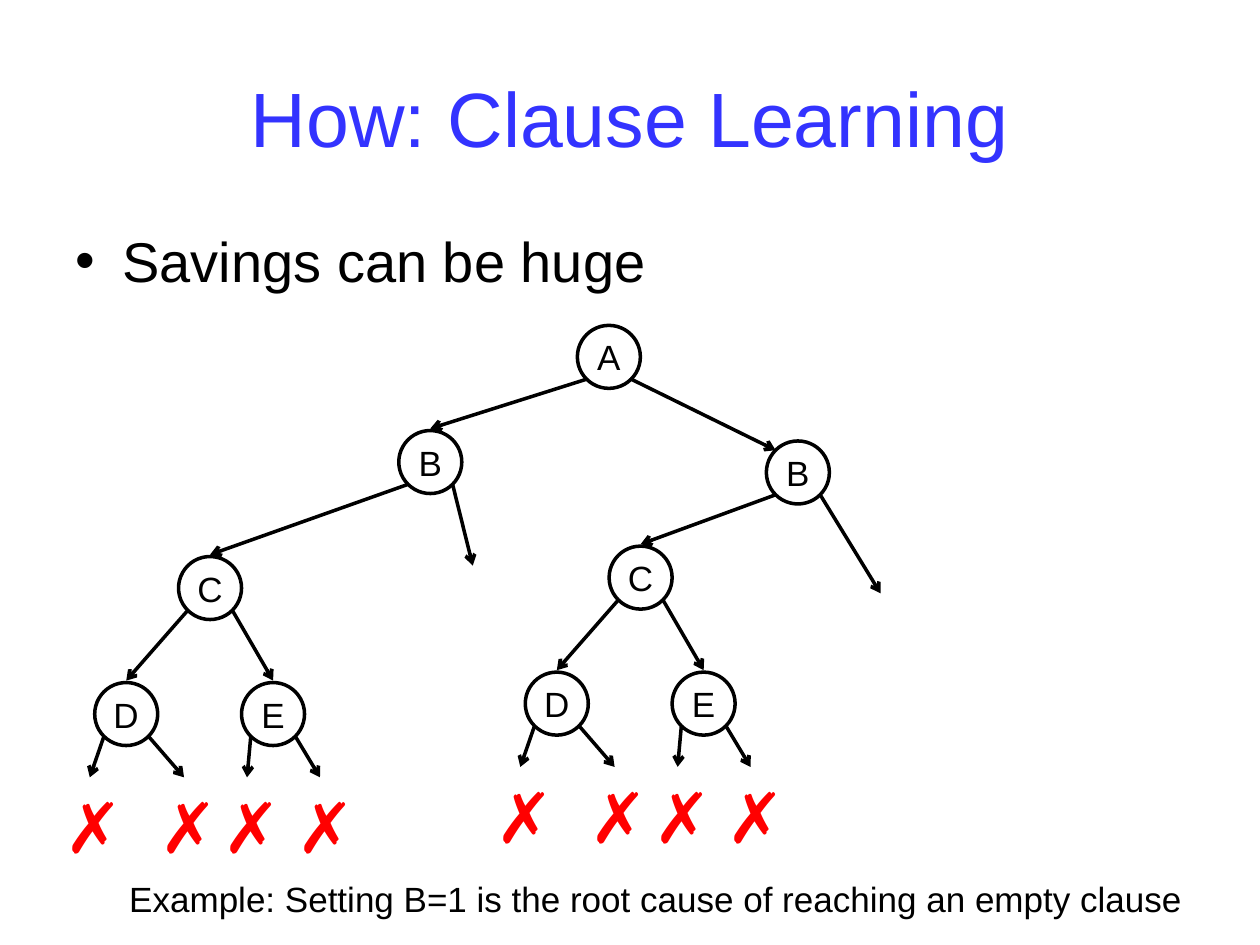
from dataclasses import dataclass

from lxml.etree import SubElement
from pptx import Presentation
from pptx.dml.color import RGBColor
from pptx.enum.shapes import MSO_CONNECTOR as Connector, MSO_SHAPE as Shape
from pptx.enum.text import MSO_ANCHOR as Anchor, PP_ALIGN as Align
from pptx.oxml.ns import qn
from pptx.util import Cm, Pt


@dataclass(frozen=True)
class Theme:
    font: str = "Arial"
    heading: RGBColor = RGBColor(0x33, 0x33, 0xFF)
    ink: RGBColor = RGBColor(0, 0, 0)
    conflict: RGBColor = RGBColor(0xFF, 0, 0)
    title_size: int = 44
    bullet_size: int = 32
    label_size: int = 20
    cross_size: int = 40
    line_width: int = 2


THEME = Theme()

TITLE = "How: Clause Learning"
BULLET = "Savings can be huge"
CAPTION = "Example: Setting B=1 is the root cause of reaching an empty clause"

# All positions are in centimetres; nodes are given by their top left corner.
DIAMETER = 1.27
TIP_GAP = 0.04
ROOT = ("A", (11.64, 6.56))
BRANCHES = [
    {"b": (8.04, 8.68), "entry": "top", "c": (3.60, 11.22), "open_tip": (9.53, 11.40)},
    {"b": (15.45, 8.89), "entry": "upper left", "c": (12.28, 11.01), "open_tip": (17.75, 11.96)},
]
# Offsets from the C node: each child and the x of its two arrow tips
CHILDREN = [
    ("D", (-1.69, 2.54), (-1.79, 0.11)),
    ("E", (1.27, 2.54), (1.38, 2.85)),
]
LEAF_DROP = 4.45
CROSS_LEFTS = (-2.54, -0.64, 0.64, 2.12)
CROSS_SIZE = (1.48, 1.95)

NEAR = DIAMETER * (1 - 0.5 ** 0.5) / 2
FAR = DIAMETER - NEAR
ANCHORS = {
    "top": (DIAMETER / 2, -TIP_GAP),
    "upper left": (NEAR, NEAR),
    "lower left": (NEAR, FAR),
    "lower right": (FAR, FAR),
}


def shifted(point, offset):
    return point[0] + offset[0], point[1] + offset[1]


def anchor(node, side):
    """Return the point of a node's outline where an arrow meets it."""
    return shifted(node, ANCHORS[side])


def write(frame, text, size, color, align=Align.CENTER):
    frame.text = text
    paragraph = frame.paragraphs[0]
    paragraph.alignment = align
    font = paragraph.runs[0].font
    font.name, font.size, font.color.rgb = THEME.font, Pt(size), color
    return paragraph


def add_text(slide, box, text, size, color, align=Align.CENTER, anchored=Anchor.TOP):
    frame = slide.shapes.add_textbox(*map(Cm, box)).text_frame
    frame.word_wrap = True
    frame.vertical_anchor = anchored
    return write(frame, text, size, color, align)


def add_bullet(paragraph, indent):
    properties = paragraph._p.get_or_add_pPr()
    properties.set("marL", str(Cm(indent)))
    properties.set("indent", str(-Cm(indent)))
    SubElement(properties, qn("a:buFont"), typeface=THEME.font)
    SubElement(properties, qn("a:buChar"), char="•")


def add_node(slide, label, corner):
    node = slide.shapes.add_shape(Shape.OVAL, *map(Cm, (*corner, DIAMETER, DIAMETER)))
    node.shadow.inherit = False
    node.fill.background()
    node.line.color.rgb = THEME.ink
    node.line.width = Pt(THEME.line_width)
    node.text_frame.word_wrap = False
    node.text_frame.vertical_anchor = Anchor.MIDDLE
    write(node.text_frame, label, THEME.label_size, THEME.ink)


def add_arrow(slide, start, tip):
    arrow = slide.shapes.add_connector(Connector.STRAIGHT, *map(Cm, (*start, *tip)))
    arrow.line.color.rgb = THEME.ink
    arrow.line.width = Pt(THEME.line_width)
    SubElement(arrow.line._get_or_add_ln(), qn("a:tailEnd"), type="arrow")
    SubElement(arrow._element.spPr, qn("a:effectLst"))


def add_arrow_pair(slide, node, left_tip, right_tip):
    add_arrow(slide, anchor(node, "lower left"), left_tip)
    add_arrow(slide, anchor(node, "lower right"), right_tip)


def add_conflict_subtree(slide, c):
    """Draw C with its children D and E, all ending in conflicts."""
    add_node(slide, "C", c)
    leaf_y = c[1] + LEAF_DROP
    child_tops = []
    for label, offset, tip_offsets in CHILDREN:
        child = shifted(c, offset)
        add_node(slide, label, child)
        child_tops.append(anchor(child, "top"))
        add_arrow_pair(slide, child, *((c[0] + dx, leaf_y) for dx in tip_offsets))
    add_arrow_pair(slide, c, *child_tops)
    for dx in CROSS_LEFTS:
        add_text(slide, (c[0] + dx, leaf_y, *CROSS_SIZE), "✗", THEME.cross_size, THEME.conflict)


def main():
    deck = Presentation()
    deck.slide_width, deck.slide_height = Cm(25.4), Cm(19.05)
    slide = deck.slides.add_slide(deck.slide_layouts[6])

    add_text(slide, (1.27, 0.76, 22.86, 3.18), TITLE, THEME.title_size, THEME.heading,
             anchored=Anchor.MIDDLE)
    bullet = add_text(slide, (1.27, 4.45, 21.39, 2.34), BULLET, THEME.bullet_size, THEME.ink,
                      Align.LEFT)
    add_bullet(bullet, 0.95)

    root_label, root = ROOT
    add_node(slide, root_label, root)
    add_arrow_pair(slide, root, *(anchor(branch["b"], branch["entry"]) for branch in BRANCHES))
    for branch in BRANCHES:
        add_node(slide, "B", branch["b"])
        add_arrow_pair(slide, branch["b"], anchor(branch["c"], "top"), branch["open_tip"])
        add_conflict_subtree(slide, branch["c"])

    add_text(slide, (1.9, 17.57, 22.65, 1.1), CAPTION, THEME.label_size, THEME.ink)
    deck.save("out.pptx")


if __name__ == "__main__":
    main()
